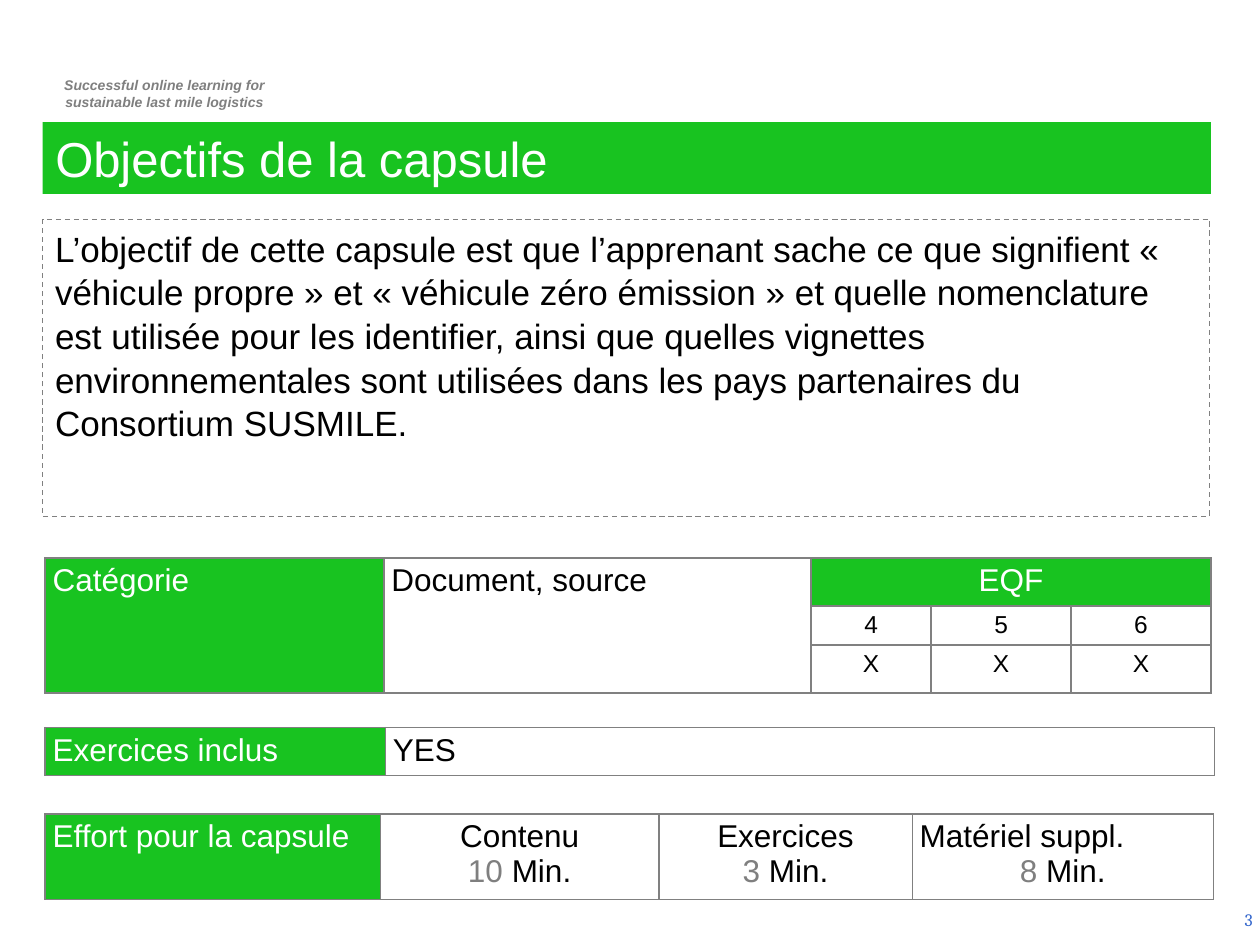
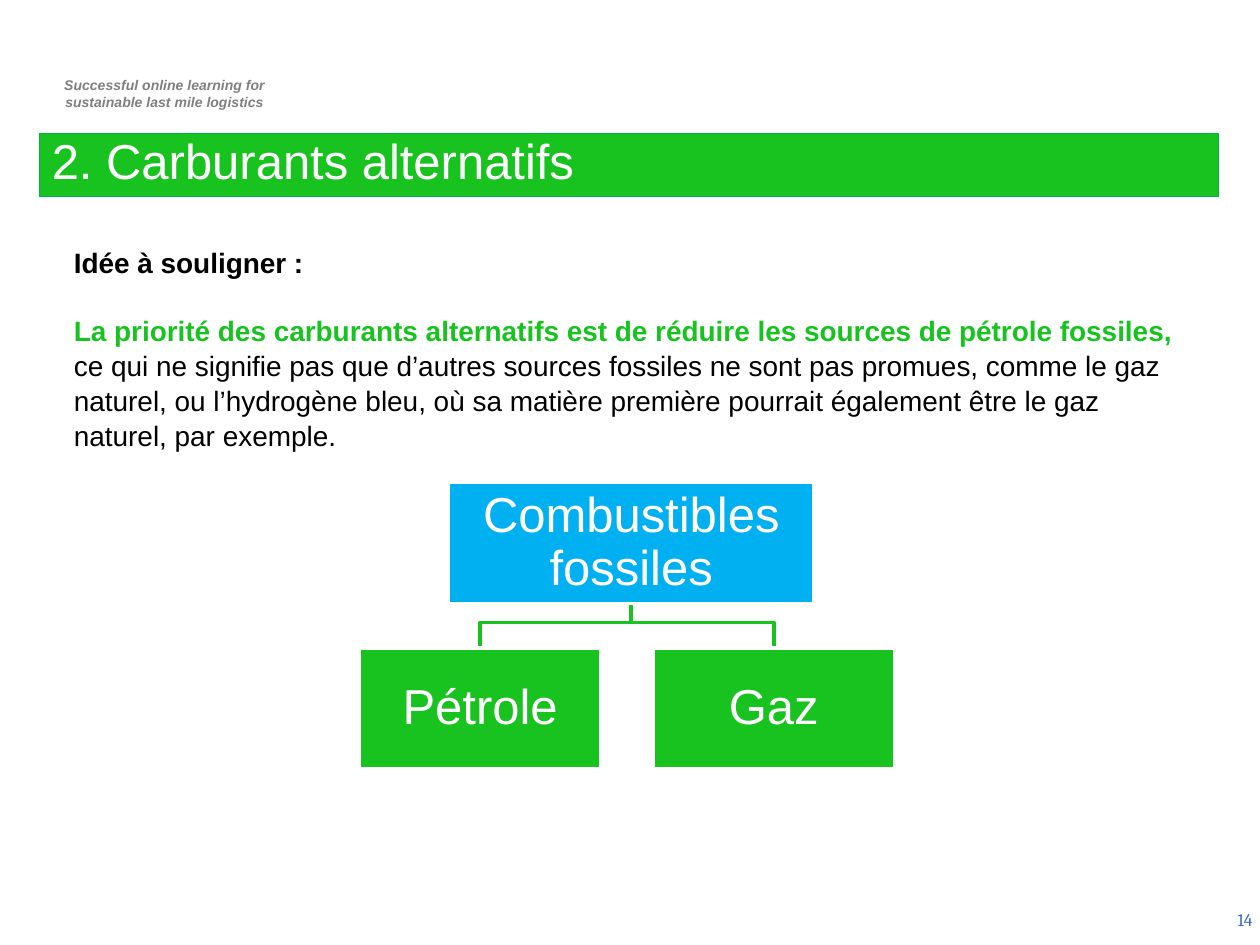
"""Build two slides of a course capsule on clean vehicles and alternative fuels."""
from lxml import etree
from pptx import Presentation
from pptx.dml.color import RGBColor
from pptx.enum import dml, shapes, text
from pptx.oxml.ns import qn
from pptx.util import Cm, Pt

GREEN, BLUE, GREY, MID_GREY = "18C320", "00B0F0", "7F7F7F", "808080"
WHITE, BLACK, NUMBER_BLUE, EDGE_GREEN = "FFFFFF", "000000", "3366CC", "00B050"
LEFT, CENTER, RIGHT = text.PP_ALIGN.LEFT, text.PP_ALIGN.CENTER, text.PP_ALIGN.RIGHT
TOP, MIDDLE, BOTTOM = text.MSO_ANCHOR.TOP, text.MSO_ANCHOR.MIDDLE, text.MSO_ANCHOR.BOTTOM


def rgb(color):
    """Turn a hex string into a colour."""
    return RGBColor.from_string(color)


def paint(shape, fill=None, line=None, width=0.75):
    """Set the fill and outline of a shape, leaving out what is not given."""
    if fill:
        shape.fill.solid()
        shape.fill.fore_color.rgb = rgb(fill)
    else:
        shape.fill.background()
    if line:
        shape.line.color.rgb = rgb(line)
        shape.line.width = Pt(width)
    else:
        shape.line.fill.background()


def write(frame, paragraphs, size, color=BLACK, align=LEFT, font="Arial",
          bold=False, italic=False, spacing=1.0, gap=0):
    """Write paragraphs, each a string or a list of (text, colour, bold) spans."""
    frame.word_wrap = True
    for index, content in enumerate(paragraphs):
        para = frame.paragraphs[0] if index == 0 else frame.add_paragraph()
        para.alignment, para.line_spacing = align, spacing
        para.space_before, para.space_after = Pt(gap if index else 0), Pt(0)
        style = para.font
        style.name, style.size = font, Pt(size)
        style.bold, style.italic = bold, italic
        style.color.rgb = rgb(color)
        if isinstance(content, str):
            para.add_run().text = content
            continue
        for words, span_color, span_bold in content:
            span = para.add_run()
            span.text = words
            span.font.color.rgb = rgb(span_color)
            span.font.bold = span_bold


def add_text(page, area, paragraphs, size, anchor=TOP, **style):
    """Add a text box."""
    box = page.shapes.add_textbox(*map(Cm, area))
    box.text_frame.vertical_anchor = anchor
    write(box.text_frame, paragraphs, size, **style)
    return box


def add_box(page, area, words, size, fill=None, line=None, width=0.75,
            anchor=MIDDLE, inset=None, **style):
    """Add a rectangle holding text."""
    box = page.shapes.add_shape(shapes.MSO_SHAPE.RECTANGLE, *map(Cm, area))
    box.shadow.inherit = False
    paint(box, fill, line, width)
    frame = box.text_frame
    frame.vertical_anchor = anchor
    if inset is not None:
        frame.margin_left = frame.margin_right = Cm(inset)
        frame.margin_top = frame.margin_bottom = Cm(inset)
    write(frame, [words], size, **style)
    return box


def add_page(deck, title, area, number, anchor=TOP, line=None, spacing=1.0):
    """Add a slide with its tagline, title band and page number."""
    page = deck.slides.add_slide(deck.slide_layouts[5])
    band = page.shapes.title
    band.left, band.top, band.width, band.height = map(Cm, area)
    paint(band, GREEN, line)
    band.text_frame.auto_size = text.MSO_AUTO_SIZE.NONE
    band.text_frame.vertical_anchor = anchor
    write(band.text_frame, [title], 28, WHITE, spacing=spacing)
    add_text(page, (0.74, 1.42, 5.16, 0.94),
             ["Successful online learning for", "sustainable last mile logistics"],
             8, color=GREY, align=CENTER, bold=True, italic=True)
    corner = add_text(page, (19.58, 18.03, 5.82, 1.02), [str(number)], 10, MIDDLE,
                      color=NUMBER_BLUE, align=RIGHT, font="Cambria")
    corner.text_frame.margin_right = Cm(0.15)
    return page


def add_borders(cell):
    """Draw a thin grey line on all four sides of a cell."""
    properties = cell._tc.get_or_add_tcPr()
    for side in ("lnL", "lnR", "lnT", "lnB"):
        edge = etree.SubElement(properties, qn(f"a:{side}"), w=str(Pt(1)))
        fill = etree.SubElement(edge, qn("a:solidFill"))
        etree.SubElement(fill, qn("a:srgbClr"), val=MID_GREY)


def add_grid(page, left, top, columns, rows):
    """Add a bordered table with no text."""
    frame = page.shapes.add_table(len(rows), len(columns), Cm(left), Cm(top),
                                  Cm(sum(columns)), Cm(sum(rows)))
    table = frame.table
    table.first_row = table.horz_banding = False
    for column, width in zip(table.columns, columns):
        column.width = Cm(width)
    for row, height in zip(table.rows, rows):
        row.height = Cm(height)
    for cell in table.iter_cells():
        cell.margin_left = cell.margin_right = Cm(0.15)
        cell.margin_top = cell.margin_bottom = Cm(0.1)
        add_borders(cell)
        cell.fill.background()
    return table


def fill_label(cell, words, align=LEFT):
    """Write a white label in a green cell."""
    cell.fill.solid()
    cell.fill.fore_color.rgb = rgb(GREEN)
    write(cell.text_frame, [words], 18, WHITE, align)


def add_category_table(page):
    """Add the table of category and EQF levels."""
    table = add_grid(page, 0.91, 11.25, [6.83, 8.61, 2.42, 2.82, 2.82], [0.95, 0.79, 0.94])
    for column in (0, 1):
        table.cell(0, column).merge(table.cell(2, column))
    table.cell(0, 2).merge(table.cell(0, 4))
    fill_label(table.cell(0, 0), "Catégorie")
    write(table.cell(0, 1).text_frame, ["Document, source"], 18)
    fill_label(table.cell(0, 2), "EQF", CENTER)
    for column, level in enumerate("456", start=2):
        for row, mark in ((1, level), (2, "X")):
            write(table.cell(row, column).text_frame, [mark], 14, align=CENTER)


def add_exercise_table(page):
    """Add the table that tells whether exercises are included."""
    table = add_grid(page, 0.91, 14.67, [6.86, 16.71], [0.95])
    fill_label(table.cell(0, 0), "Exercices inclus")
    write(table.cell(0, 1).text_frame, ["YES"], 18)


def add_effort_table(page):
    """Add the table of minutes needed for each part."""
    table = add_grid(page, 0.91, 16.41, [6.76, 5.61, 5.11, 6.07], [1.7])
    fill_label(table.cell(0, 0), "Effort pour la capsule")
    efforts = [("Contenu", 10, CENTER), ("Exercices", 3, CENTER), ("Matériel suppl.", 8, LEFT)]
    for column, (part, minutes, align) in enumerate(efforts, start=1):
        frame = table.cell(0, column).text_frame
        duration = [(f"{minutes} ", GREY, False), ("Min.", BLACK, False)]
        write(frame, [part, duration], 18, align=CENTER)
        frame.paragraphs[0].alignment = align


def add_fuel_tree(page):
    """Add the tree of fossil fuels: one root and its branches."""
    root_left, root_top, root_width, height = 9.04, 9.73, 7.37, 2.44
    child_top, child_width = 13.06, 4.88
    root_middle, root_bottom, bend = root_left + root_width / 2, root_top + height, 12.55
    children = {"Pétrole": 7.24, "Gaz": 13.16}
    for left in children.values():
        middle = left + child_width / 2
        builder = page.shapes.build_freeform(Cm(root_middle), Cm(root_bottom))
        corners = [(root_middle, bend), (middle, bend), (middle, child_top)]
        builder.add_line_segments([(Cm(x), Cm(y)) for x, y in corners], close=False)
        branch = builder.convert_to_shape()
        branch.shadow.inherit = False
        paint(branch, line=GREEN, width=2)
    look = dict(line=WHITE, width=2, inset=0.05, color=WHITE, align=CENTER, spacing=0.9)
    add_box(page, (root_left, root_top, root_width, height), "Combustibles fossiles", 28,
            fill=BLUE, **look)
    for words, left in children.items():
        add_box(page, (left, child_top, child_width, height), words, 28, fill=GREEN, **look)


def build_objectives(deck):
    """Build the slide of objectives."""
    page = add_page(deck, "Objectifs de la capsule", (0.86, 2.46, 23.55, 1.45), 3)
    goal = add_box(
        page, (0.86, 4.42, 23.52, 5.99),
        "L’objectif de cette capsule est que l’apprenant sache ce que signifient « véhicule "
        "propre » et « véhicule zéro émission » et quelle nomenclature est utilisée pour les "
        "identifier, ainsi que quelles vignettes environnementales sont utilisées dans les "
        "pays partenaires du Consortium SUSMILE.",
        20, line=MID_GREY, anchor=TOP, spacing=1.04)
    goal.line.dash_style = dml.MSO_LINE.DASH
    add_category_table(page)
    add_exercise_table(page)
    add_effort_table(page)


def build_fuels(deck):
    """Build the slide of alternative fuels."""
    page = add_page(deck, "2. Carburants alternatifs", (0.79, 2.69, 23.77, 1.27), 14,
                    BOTTOM, EDGE_GREEN, 0.9)
    priority = [
        ("La priorité des carburants alternatifs est de réduire les sources de pétrole "
         "fossiles, ", GREEN, True),
        ("ce qui ne signifie pas que d’autres sources fossiles ne sont pas promues, comme le "
         "gaz naturel, ou l’hydrogène bleu, où sa matière première pourrait également être "
         "le gaz naturel, par exemple.", BLACK, False)]
    add_text(page, (1.24, 4.8, 22.94, 5.05), ["Idée à souligner :", priority], 16,
             bold=True, spacing=1.04, gap=19)
    add_fuel_tree(page)


def main():
    """Build and save the deck."""
    deck = Presentation()
    deck.slide_width, deck.slide_height = Cm(25.4), Cm(19.05)
    build_objectives(deck)
    build_fuels(deck)
    deck.save("out.pptx")


if __name__ == "__main__":
    main()
